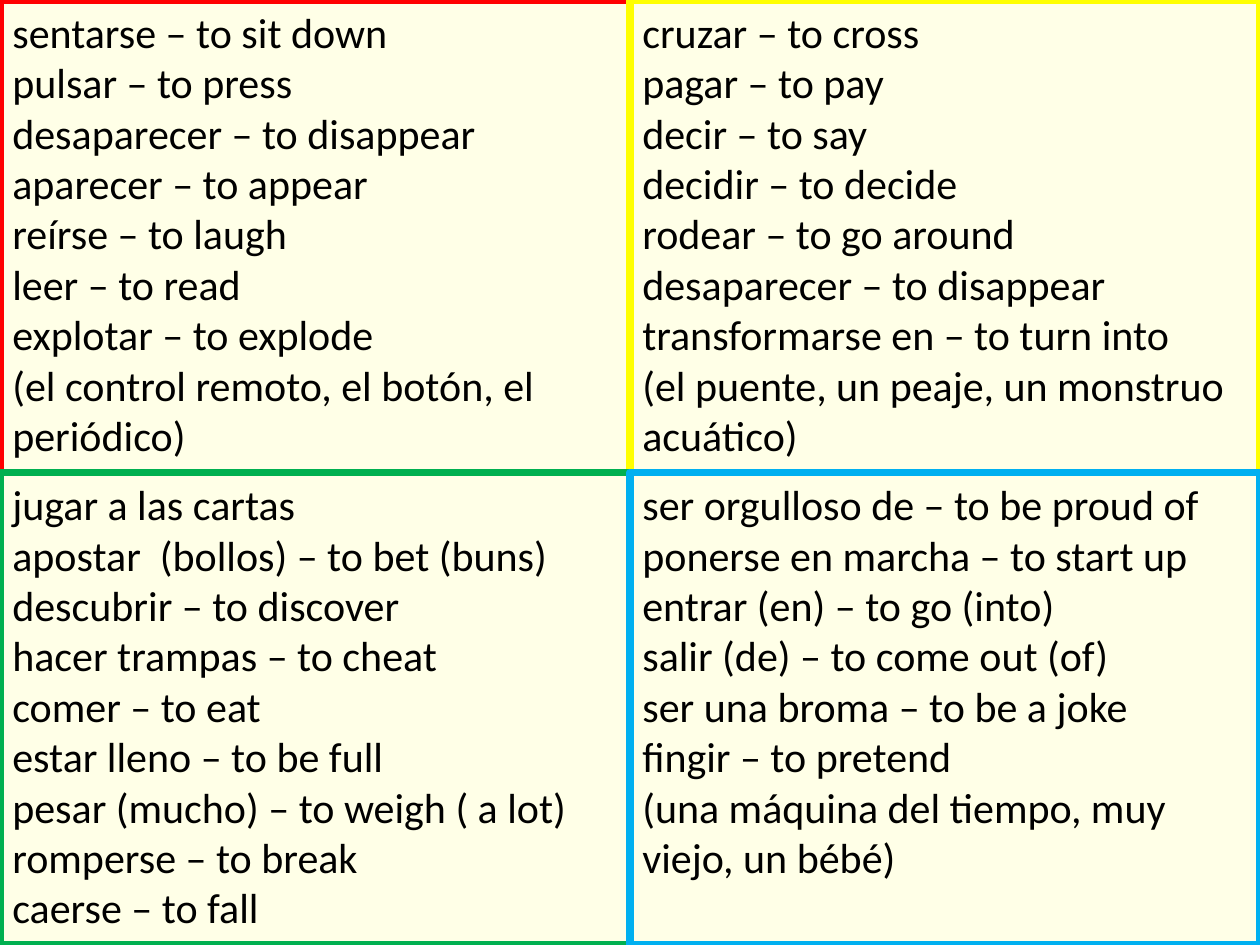
from pptx import Presentation
from pptx.dml.color import RGBColor
from pptx.enum.shapes import MSO_SHAPE
from pptx.enum.text import MSO_ANCHOR, PP_ALIGN
from pptx.util import Cm, Pt

WIDTH, HEIGHT = 25.4, 19.05
COLS = 2
HEX = {
    "page": "FFFFE7", "text": "000000", "red": "FF0000",
    "yellow": "FFFF00", "green": "00B050", "blue": "00B0F0",
}

# Each string is a paragraph; a newline in it is a line break.
CARDS = [
    ("red", [
        "sentarse – to sit down",
        "pulsar – to press\ndesaparecer – to disappear\n"
        "aparecer – to appear\nreírse – to laugh\nleer – to read\n"
        "explotar – to explode\n"
        "(el control remoto, el botón, el periódico)",
    ]),
    ("yellow", [
        "cruzar – to cross",
        "pagar – to pay",
        "decir – to say",
        "decidir – to decide",
        "rodear – to go around",
        "desaparecer – to disappear\ntransformarse en – to turn into\n"
        "(el puente, un peaje, un monstruo acuático)",
    ]),
    ("green", [
        "jugar a las cartas\napostar  (bollos) – to bet (buns)\n"
        "descubrir – to discover\nhacer trampas – to cheat\n"
        "comer – to eat\nestar lleno – to be full\n"
        "pesar (mucho) – to weigh ( a lot)\nromperse – to break\n"
        "caerse – to fall",
    ]),
    ("blue", [
        "ser orgulloso de – to be proud of\n"
        "ponerse en marcha – to start up",
        "entrar (en) – to go (into)",
        "salir (de) – to come out (of)",
        "ser una broma – to be a joke",
        "fingir – to pretend\n"
        "(una máquina del tiempo, muy viejo, un bébé)",
    ]),
]


def color(name):
    return RGBColor.from_string(HEX[name])


def add_text(para, text):
    para.alignment = PP_ALIGN.LEFT
    for i, line in enumerate(text.split("\n")):
        if i:
            para.add_line_break()
        run = para.add_run()
        run.text = line
        run.font.name = "Calibri"
        run.font.size = Pt(24)
        run.font.color.rgb = color("text")


def add_card(slide, index, edge, paras):
    """Place a framed word list in its cell of the grid."""
    row, col = divmod(index, COLS)
    wide, high = WIDTH / COLS, HEIGHT / (len(CARDS) // COLS)
    card = slide.shapes.add_shape(
        MSO_SHAPE.RECTANGLE,
        Cm(col * wide), Cm(row * high), Cm(wide), Cm(high))
    card.shadow.inherit = False
    card.fill.background()
    card.line.color.rgb = color(edge)
    card.line.width = Pt(4.5)
    frame = card.text_frame
    frame.word_wrap = True
    frame.vertical_anchor = MSO_ANCHOR.TOP
    for i, text in enumerate(paras):
        para = frame.add_paragraph() if i else frame.paragraphs[0]
        add_text(para, text)


def main():
    deck = Presentation()
    deck.slide_width, deck.slide_height = Cm(WIDTH), Cm(HEIGHT)
    slide = deck.slides.add_slide(deck.slide_layouts[6])
    page = slide.background.fill
    page.solid()
    page.fore_color.rgb = color("page")
    for i, (edge, paras) in enumerate(CARDS):
        add_card(slide, i, edge, paras)
    deck.save("out.pptx")


if __name__ == "__main__":
    main()
